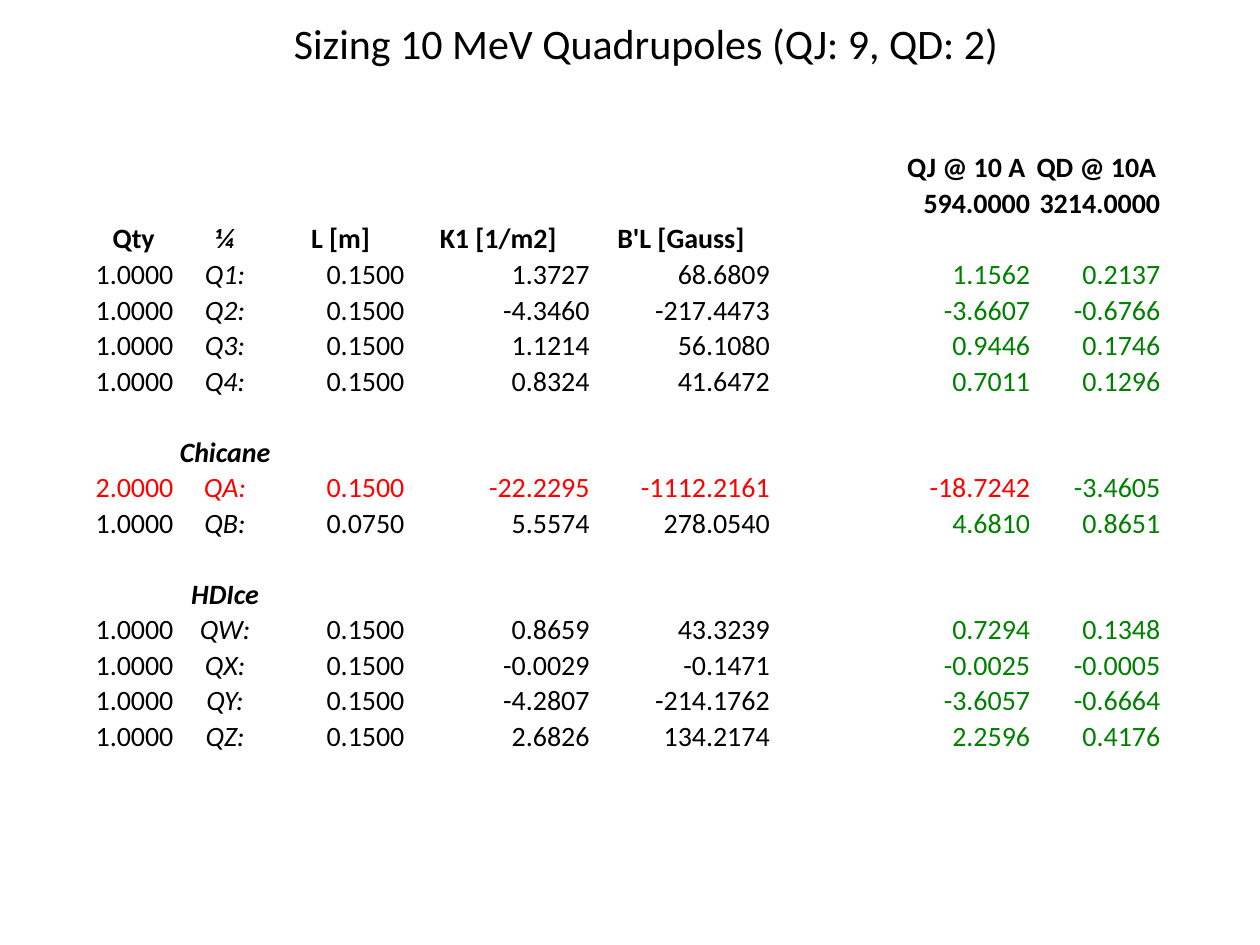
from lxml.etree import SubElement
from pptx import Presentation
from pptx.dml.color import RGBColor
from pptx.enum.text import MSO_ANCHOR, PP_ALIGN
from pptx.oxml.ns import qn
from pptx.util import Pt

FONT = "Calibri"
COLORS = {"text": "000000", "fits": "008000", "exceeds": "FF0000"}
COLUMN_WIDTHS = [46.8, 57.6, 74.4, 105.8, 103, 74.4, 74.4, 74.4]
ROW_HEIGHT = 20.2
TEXT_SIZE = 16
LABEL_COLUMN = 1
CURRENT_COLUMNS = (6, 7)

HEADERS = [
    ["", "", "", "", "", "", "QJ @ 10 A", "QD @ 10A"],
    ["", "", "", "", "", "", "594.0000", "3214.0000"],
    ["Qty", "¼", "L [m]", "K1 [1/m2]", "B'L [Gauss]", "", "", ""],
]
SECTIONS = [
    ("", [
        ["1.0000", "Q1:", "0.1500", "1.3727", "68.6809", "", "1.1562", "0.2137"],
        ["1.0000", "Q2:", "0.1500", "-4.3460", "-217.4473", "", "-3.6607", "-0.6766"],
        ["1.0000", "Q3:", "0.1500", "1.1214", "56.1080", "", "0.9446", "0.1746"],
        ["1.0000", "Q4:", "0.1500", "0.8324", "41.6472", "", "0.7011", "0.1296"],
    ]),
    ("Chicane", [
        ["2.0000", "QA:", "0.1500", "-22.2295", "-1112.2161", "", "-18.7242", "-3.4605"],
        ["1.0000", "QB:", "0.0750", "5.5574", "278.0540", "", "4.6810", "0.8651"],
    ]),
    ("HDIce", [
        ["1.0000", "QW:", "0.1500", "0.8659", "43.3239", "", "0.7294", "0.1348"],
        ["1.0000", "QX:", "0.1500", "-0.0029", "-0.1471", "", "-0.0025", "-0.0005"],
        ["1.0000", "QY:", "0.1500", "-4.2807", "-214.1762", "", "-3.6057", "-0.6664"],
        ["1.0000", "QZ:", "0.1500", "2.6826", "134.2174", "", "2.2596", "0.4176"],
    ]),
]


def write_text(tf, text, size=TEXT_SIZE, color="text", bold=False, italic=False,
               align=PP_ALIGN.CENTER):
    p = tf.paragraphs[0]
    p.alignment = align
    r = p.add_run()
    r.text = text
    r.font.name = FONT
    r.font.size = Pt(size)
    r.font.bold = bold
    r.font.italic = italic
    r.font.color.rgb = RGBColor.from_string(COLORS[color])


def add_title(slide, text):
    sp = slide.shapes.add_textbox(Pt(159), Pt(6.5), Pt(420.5), Pt(36))
    sp.text_frame.word_wrap = False
    write_text(sp.text_frame, text, size=24)


def table_rows():
    """Return (cells, is_heading) for each row, with a blank row before a named section."""
    rows = [(cells, True) for cells in HEADERS]
    for name, magnets in SECTIONS:
        if name:
            blank = [""] * len(COLUMN_WIDTHS)
            heading = list(blank)
            heading[LABEL_COLUMN] = name
            rows += [(blank, False), (heading, True)]
        rows += [(cells, False) for cells in magnets]
    return rows


def value_color(cells, col):
    """Mark the magnet that is too strong for QJ in red, and usable currents in green."""
    if cells[LABEL_COLUMN] == "QA:" and col != CURRENT_COLUMNS[-1]:
        return "exceeds"
    return "fits" if col in CURRENT_COLUMNS else "text"


def fill_cell(cell, text, **text_format):
    cell.fill.background()
    cell.vertical_anchor = MSO_ANCHOR.BOTTOM
    cell.margin_left = cell.margin_right = cell.margin_top = Pt(0.72)
    cell.margin_bottom = Pt(0)
    if text:
        write_text(cell.text_frame, text, **text_format)
    else:
        # An empty cell keeps its row low only if its end mark has the text size.
        p = cell.text_frame.paragraphs[0]
        SubElement(p._p, qn("a:endParaRPr"), sz=str(TEXT_SIZE * 100))


def add_magnet_table(slide):
    rows = table_rows()
    frame = slide.shapes.add_table(
        len(rows), len(COLUMN_WIDTHS), Pt(53), Pt(85.7),
        Pt(sum(COLUMN_WIDTHS)), Pt(ROW_HEIGHT * len(rows)))
    table = frame.table
    table.first_row = False
    table.horz_banding = False
    for column, width in zip(table.columns, COLUMN_WIDTHS):
        column.width = Pt(width)
    for row, (cells, is_heading) in zip(table.rows, rows):
        row.height = Pt(ROW_HEIGHT)
        for col, text in enumerate(cells):
            is_number = text.lstrip("-")[:1].isdecimal()
            fill_cell(
                row.cells[col], text, bold=is_heading,
                italic=col == LABEL_COLUMN,
                color="text" if is_heading else value_color(cells, col),
                align=PP_ALIGN.RIGHT if is_number else PP_ALIGN.CENTER)


def main():
    prs = Presentation()
    prs.slide_width, prs.slide_height = Pt(720), Pt(540)
    slide = prs.slides.add_slide(prs.slide_layouts[6])
    add_magnet_table(slide)
    add_title(slide, "Sizing 10 MeV Quadrupoles (QJ: 9, QD: 2)")
    prs.save("out.pptx")


if __name__ == "__main__":
    main()
